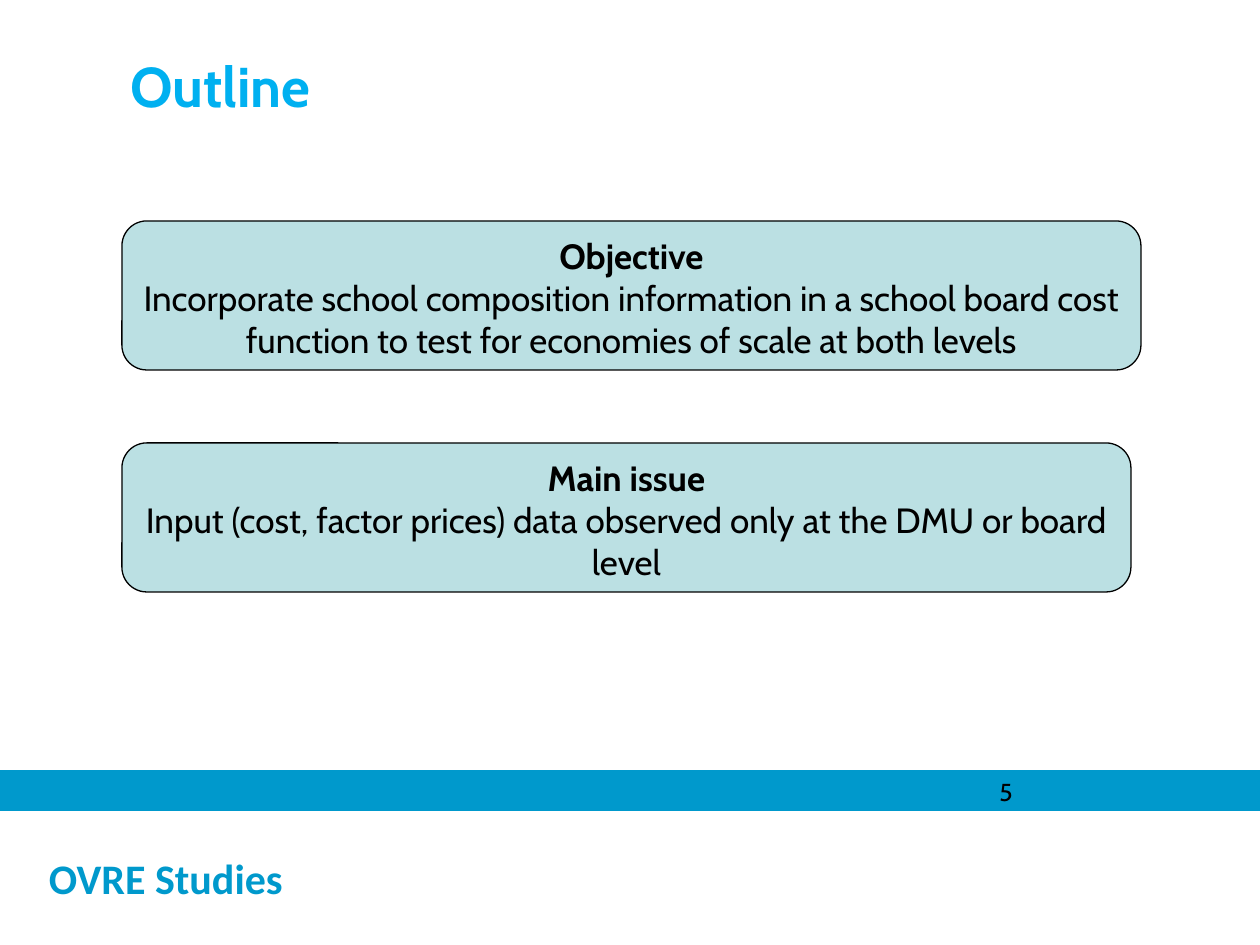
from pptx import Presentation
from pptx.dml.color import RGBColor
from pptx.enum.shapes import MSO_SHAPE as Shape
from pptx.enum.text import MSO_ANCHOR as Anchor, PP_ALIGN as Align
from pptx.util import Pt

PX = 914400 / 126
WIDE, HIGH = 1260, 945
BLACK = RGBColor(0x00, 0x00, 0x00)
WHITE = RGBColor(0xFF, 0xFF, 0xFF)
SKY = RGBColor(0x00, 0xB0, 0xF0)
BLUE = RGBColor(0x00, 0x99, 0xCC)
PALE = RGBColor(0xBB, 0xE0, 0xE3)


def px(n):
    return round(n * PX)


def write(para, text, color=BLACK, align=Align.LEFT, **form):
    para.text = text
    para.alignment = align
    font = para.font
    for key, value in ({"name": "Cabin", "bold": False} | form).items():
        setattr(font, key, value)
    font.color.rgb = color


def block(slide, kind, box, fill, line=None):
    shape = slide.shapes.add_shape(kind, *map(px, box))
    shape.shadow.inherit = False
    shape.fill.solid()
    shape.fill.fore_color.rgb = fill
    if line is None:
        shape.line.fill.background()
    else:
        shape.line.color.rgb = line
        shape.line.width = Pt(0.75)
    return shape


def footer(slide, box, brand, number):
    """Blue strip with the page number, above a white band with the name."""
    left, top, width, height = box
    strip = 39
    band = block(slide, Shape.RECTANGLE,
                 (left, top + strip, width, height - strip), WHITE)
    frame = band.text_frame
    frame.margin_left = px(49)
    frame.vertical_anchor = Anchor.MIDDLE
    write(frame.paragraphs[0], brand, BLUE,
          name="Calibri", size=Pt(24), bold=True)
    block(slide, Shape.RECTANGLE, (left, top, width, strip), BLUE, BLUE)
    page = slide.shapes.add_textbox(*map(px, (left + 987, top, 262, 32)))
    page.text_frame.word_wrap = True
    write(page.text_frame.paragraphs[0], number, size=Pt(14))


def heading(slide, box, text):
    title = slide.shapes.title
    title.left, title.top, title.width, title.height = map(px, box)
    frame = title.text_frame
    frame.margin_left = px(76)
    frame.vertical_anchor = Anchor.TOP
    write(frame.paragraphs[0], text, SKY, size=Pt(32), bold=True)


def card(slide, box, head, body):
    shape = block(slide, Shape.ROUNDED_RECTANGLE, box, PALE, BLACK)
    frame = shape.text_frame
    frame.word_wrap = True
    frame.vertical_anchor = Anchor.TOP
    write(frame.paragraphs[0], head, align=Align.CENTER,
          size=Pt(20), bold=True)
    write(frame.add_paragraph(), body, align=Align.CENTER, size=Pt(20))


def main():
    deck = Presentation()
    deck.slide_width, deck.slide_height = px(WIDE), px(HIGH)
    slide = deck.slides.add_slide(deck.slide_layouts[5])
    footer(slide, (0, 771, WIDE, HIGH - 771), "OVRE Studies", "5")
    heading(slide, (54, 45, 1110, 81), "Outline")
    cards = [
        (1019, "Objective",
         "Incorporate school composition information in a school board cost "
         "function to test for economies of scale at both levels"),
        (1009, "Main issue",
         "Input (cost, factor prices) data observed only at the DMU or board "
         "level"),
    ]
    for row, (width, head, body) in enumerate(cards):
        card(slide, (122, 221 + 222 * row, width, 149), head, body)
    deck.save("out.pptx")


if __name__ == "__main__":
    main()
